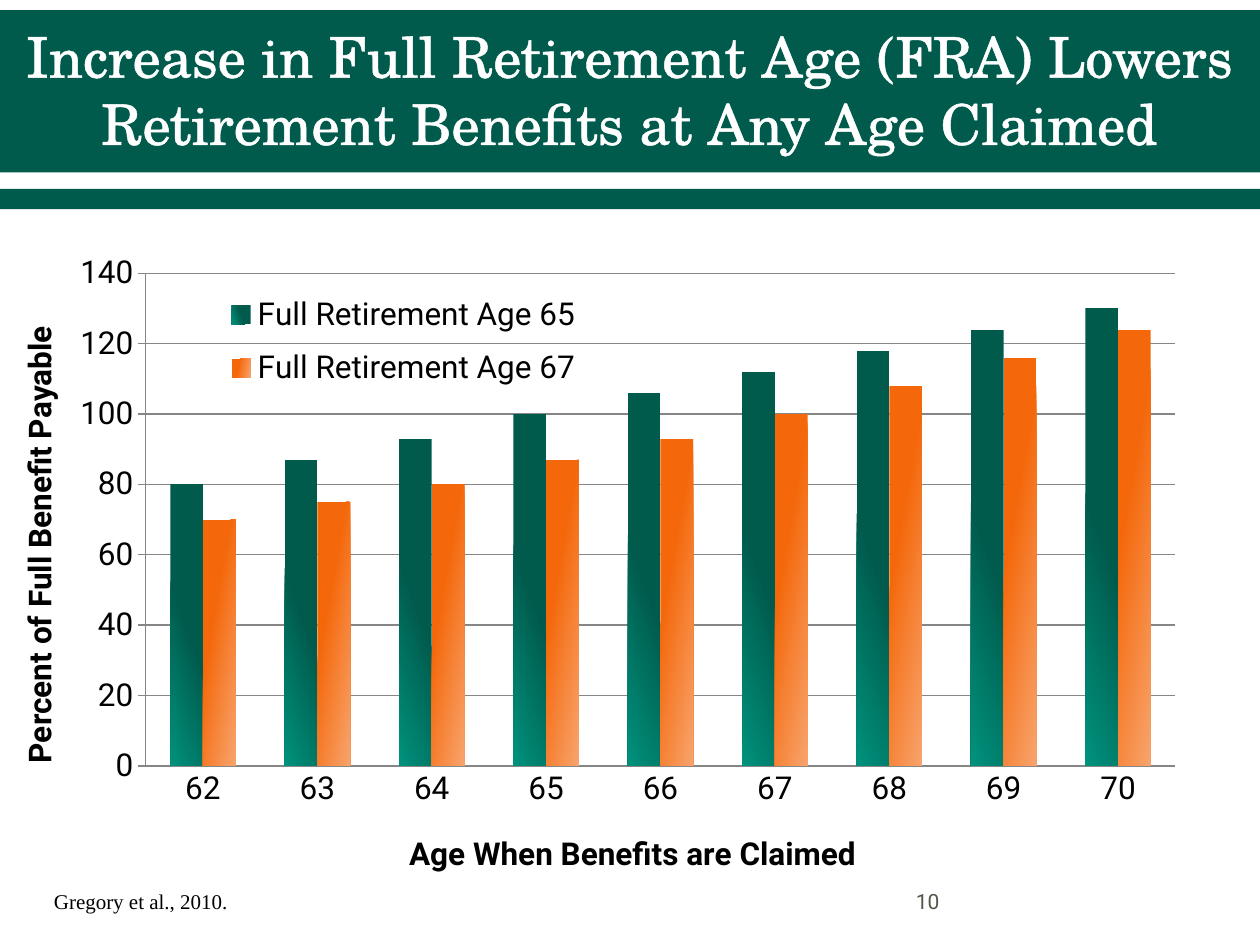
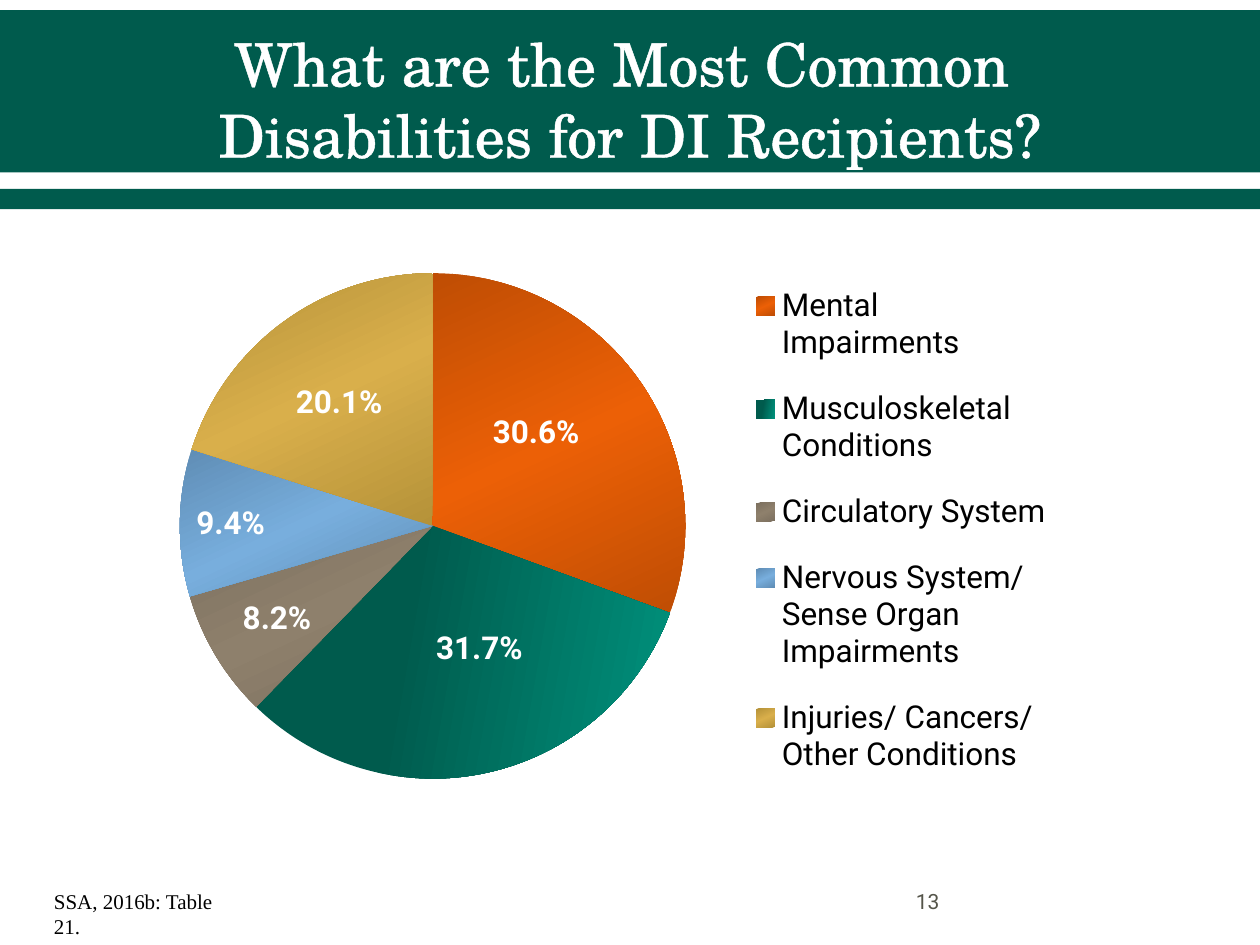
from dataclasses import dataclass

from lxml.etree import SubElement
from pptx import Presentation
from pptx.chart.data import CategoryChartData
from pptx.dml.color import RGBColor
from pptx.enum.chart import XL_CHART_TYPE, XL_LABEL_POSITION, XL_LEGEND_POSITION, XL_TICK_MARK
from pptx.enum.shapes import MSO_SHAPE
from pptx.enum.text import MSO_ANCHOR, MSO_AUTO_SIZE, PP_ALIGN
from pptx.oxml.ns import qn
from pptx.util import Inches, Pt


@dataclass(frozen=True)
class Theme:
    """Colours, typefaces and type sizes of the deck."""

    green: str = "005B4D"
    light_green: str = "00927D"
    orange: str = "F4680B"
    light_orange: str = "F8A46D"
    white: str = "FFFFFF"
    black: str = "000000"
    grey: str = "55554A"
    grid: str = "868686"
    title_font: str = "TeX Gyre Schola"
    chart_font: str = "Roboto"
    source_font: str = "Times New Roman"
    chart_size: int = 18
    footer_size: int = 12


THEME = Theme()
BANDS = [(0.08, 1.26), (1.5, 0.16), (0.11, 1.26)]

AGES = ["62", "63", "64", "65", "66", "67", "68", "69", "70"]
BENEFITS = {
    "Full Retirement Age 65": (
        [80, 87, 93, 100, 106, 112, 118, 124, 130],
        [(0, THEME.green), (50, THEME.green), (100, THEME.light_green)],
        160,
    ),
    "Full Retirement Age 67": (
        [70, 75, 80, 87, 93, 100, 108, 116, 124],
        [(0, THEME.orange), (36, THEME.orange), (100, THEME.light_orange)],
        10,
    ),
}


def shaded(edge, middle):
    """Return gradient stops that darken towards both ends."""
    return [(0, edge), (50, middle), (100, edge)]


DISABILITIES = [
    ("Mental Impairments", 30.6, shaded("BF4D04", "EC6006"), 65, (0, -0.03)),
    (
        "Musculoskeletal Conditions",
        31.7,
        [(0, THEME.green), (36, THEME.green), (100, THEME.light_green)],
        10,
        (0.02, 0),
    ),
    ("Circulatory System", 8.2, shaded("7C705F", "8E806C"), 65, (-0.05, 0.04)),
    ("Nervous System/ Sense Organ Impairments", 9.4, shaded("5F8DB5", "78AEDD"), 65, (-0.08, 0)),
    ("Injuries/ Cancers/ Other Conditions", 20.1, shaded("B59239", "D9AF4B"), 65, (-0.02, -0.03)),
]


def rgb(code):
    """Turn a hex code into a colour."""
    return RGBColor.from_string(code)


def style_font(font, face, size, color, bold=False):
    """Set face, size, colour and weight of a font."""
    font.name, font.size, font.bold = face, Pt(size), bold
    font.color.rgb = rgb(color)


def style_chart_font(font, color=THEME.black, bold=False):
    """Apply the common chart lettering."""
    style_font(font, THEME.chart_font, THEME.chart_size, color, bold)


def fill_gradient(fill, stops, clockwise):
    """Fill with the given stops along a clockwise angle."""
    fill.gradient()
    fill.gradient_angle = 360 - clockwise
    stop_list = fill._xPr.find(qn("a:gradFill")).find(qn("a:gsLst"))
    for old in list(stop_list):
        stop_list.remove(old)
    for percent, color in stops:
        stop = SubElement(stop_list, qn("a:gs"), pos=str(percent * 1000))
        SubElement(stop, qn("a:srgbClr"), val=color)


def set_layout(parent, index, **settings):
    """Give a chart part a manual layout at its place in the element order."""
    for old in parent.findall(qn("c:layout")):
        parent.remove(old)
    layout = SubElement(parent, qn("c:layout"))
    manual = SubElement(layout, qn("c:manualLayout"))
    for name, value in settings.items():
        SubElement(manual, qn(f"c:{name}"), val=str(value))
    parent.insert(index, layout)


def place_edge(parent, index, x, y, **size):
    """Place a chart part by fractions measured from the chart's edges."""
    set_layout(parent, index, xMode="edge", yMode="edge", x=x, y=y, **size)


def add_bands(slide, master):
    """Draw the green bands and hand them to the master."""
    for order, (top, height) in enumerate(BANDS):
        band = slide.shapes.add_shape(
            MSO_SHAPE.RECTANGLE, 0, Inches(top), Inches(10), Inches(height)
        )
        band.shadow.inherit = False
        band.fill.solid()
        band.fill.fore_color.rgb = rgb(THEME.green)
        band.line.fill.background()
        band.element.nvSpPr.cNvPr.set("id", str(100 + order))
        master.shapes.element.insert(2 + order, band.element)


def set_title(slide, text, box, size):
    """Write the slide title into its placeholder."""
    title = slide.shapes.title
    title.left, title.top, title.width, title.height = map(Inches, box)
    frame = title.text_frame
    frame.text = text
    frame.word_wrap = True
    frame.auto_size = MSO_AUTO_SIZE.NONE
    frame.vertical_anchor = MSO_ANCHOR.MIDDLE
    heading = frame.paragraphs[0]
    heading.alignment = PP_ALIGN.CENTER
    for run in heading.runs:
        style_font(run.font, THEME.title_font, size, THEME.white)
        properties = run._r.get_or_add_rPr()
        outline = SubElement(properties, qn("a:ln"), w=str(Pt(1.1)))
        solid = SubElement(outline, qn("a:solidFill"))
        SubElement(solid, qn("a:srgbClr"), val=THEME.white)
        properties.insert(0, outline)


def add_note(slide, text, box, face, color, anchor, wrap):
    """Add one small footer text."""
    note = slide.shapes.add_textbox(*map(Inches, box))
    frame = note.text_frame
    frame.text = text
    frame.word_wrap = wrap
    frame.vertical_anchor = anchor
    style_font(frame.paragraphs[0].runs[0].font, face, THEME.footer_size, color)


def add_footer(slide, source, number):
    """Add the source credit and the page number."""
    add_note(slide, source, (0.33, 7, 1.7, 0.3), THEME.source_font, THEME.black,
             MSO_ANCHOR.TOP, False)
    add_note(slide, number, (7.17, 6.95, 2.33, 0.4), THEME.chart_font, THEME.grey,
             MSO_ANCHOR.MIDDLE, True)


def add_chart(slide, kind, box, data, plot_box, legend_box):
    """Add a chart with a placed plot area and legend."""
    chart = slide.shapes.add_chart(kind, *map(Inches, box), data).chart
    chart.has_title = False
    style_chart_font(chart.font)
    chart.has_legend = True
    legend = chart.legend
    legend.position = XL_LEGEND_POSITION.RIGHT
    legend.include_in_layout = False
    style_chart_font(legend.font)
    x, y, w, h = legend_box
    place_edge(legend._element, 1, x, y, w=w, h=h)
    x, y, w, h = plot_box
    plot_area = chart.element.xpath("//c:plotArea")[0]
    set_layout(plot_area, 0, layoutTarget="inner", xMode="edge", yMode="edge",
               x=x, y=y, w=w, h=h)
    return chart


def style_axis(axis, title, x, y, tick):
    """Title an axis and set its lettering, line and ticks."""
    axis.has_title = True
    frame = axis.axis_title.text_frame
    frame.text = title
    style_chart_font(frame.paragraphs[0].runs[0].font, bold=True)
    place_edge(axis.axis_title.element, 1, x, y)
    style_chart_font(axis.tick_labels.font)
    axis.major_tick_mark = tick
    axis.minor_tick_mark = XL_TICK_MARK.NONE
    axis.format.line.color.rgb = rgb(THEME.grid)


def add_benefit_chart(slide, box):
    """Compare benefits by claiming age for two full retirement ages."""
    data = CategoryChartData()
    data.categories = AGES
    for name, (percents, _, _) in BENEFITS.items():
        data.add_series(name, percents)
    chart = add_chart(slide, XL_CHART_TYPE.COLUMN_CLUSTERED, box, data,
                      (0.112, 0.146, 0.791, 0.68), (0.165, 0.155, 0.29, 0.17))
    columns = chart.plots[0]
    columns.gap_width = 150
    columns.vary_by_categories = False
    for series, (_, stops, angle) in zip(columns.series, BENEFITS.values()):
        fill_gradient(series.format.fill, stops, angle)
    style_axis(chart.category_axis, "Age When Benefits are Claimed", 0.31, 0.91,
               XL_TICK_MARK.NONE)
    benefit_axis = chart.value_axis
    style_axis(benefit_axis, "Percent of Full Benefit Payable ", 0.01, 0.2,
               XL_TICK_MARK.OUTSIDE)
    benefit_axis.minimum_scale, benefit_axis.maximum_scale = 0, 140
    benefit_axis.major_unit = 20
    benefit_axis.tick_labels.number_format = "#,##0"
    benefit_axis.tick_labels.number_format_is_linked = False
    benefit_axis.has_major_gridlines = True
    benefit_axis.major_gridlines.format.line.color.rgb = rgb(THEME.grid)


def add_disability_chart(slide, box):
    """Show the shares of the most common disabilities."""
    data = CategoryChartData()
    data.categories = [name for name, *_ in DISABILITIES]
    data.add_series("Series 1", [share for _, share, *_ in DISABILITIES])
    chart = add_chart(slide, XL_CHART_TYPE.PIE, box, data,
                      (0.057, 0.151, 0.535, 0.725), (0.665, 0.13, 0.31, 0.78))
    shares = chart.plots[0].series[0]
    labels = shares.data_labels
    labels.show_value = True
    labels.number_format = "General\\%"
    labels.number_format_is_linked = False
    labels.position = XL_LABEL_POSITION.CENTER
    style_chart_font(labels.font, THEME.white, True)
    for index, (_, _, stops, angle, (dx, dy)) in enumerate(DISABILITIES):
        point = shares.points[index]
        fill_gradient(point.format.fill, stops, angle)
        point.data_label.position = XL_LABEL_POSITION.CENTER
        style_chart_font(point.data_label.font, THEME.white, True)
        label = chart.element.xpath(f'//c:dLbl[c:idx/@val="{index}"]')[0]
        set_layout(label, 1, x=dx, y=dy)
        number_format = SubElement(label, qn("c:numFmt"), formatCode="General\\%",
                                   sourceLinked="0")
        label.insert(2, number_format)


def build_benefit_slide(slide):
    """Build the slide on the rise in full retirement age."""
    set_title(slide,
              "Increase in Full Retirement Age (FRA) Lowers Retirement Benefits at Any Age Claimed",
              (0, 0.08, 10, 1.25), 32)
    add_footer(slide, "Gregory et al., 2010.", "10")
    add_benefit_chart(slide, (0, 1.33, 10.33, 5.75))


def build_disability_slide(slide):
    """Build the slide on common disabilities."""
    set_title(slide, "What are the Most Common \vDisabilities for DI Recipients?",
              (0.5, 0.17, 9, 1.22), 34)
    add_footer(slide, "SSA, 2016b: Table 21.", "13")
    add_disability_chart(slide, (1, 1.33, 7.5, 5.54))


def main():
    """Build and save the deck."""
    deck = Presentation()
    deck.slide_width, deck.slide_height = Inches(10), Inches(7.5)
    title_only = deck.slide_layouts[5]
    builders = [build_benefit_slide, build_disability_slide]
    slides = [deck.slides.add_slide(title_only) for _ in builders]
    add_bands(slides[0], deck.slide_master)
    for build, slide in zip(builders, slides):
        build(slide)
    deck.save("out.pptx")


if __name__ == "__main__":
    main()
